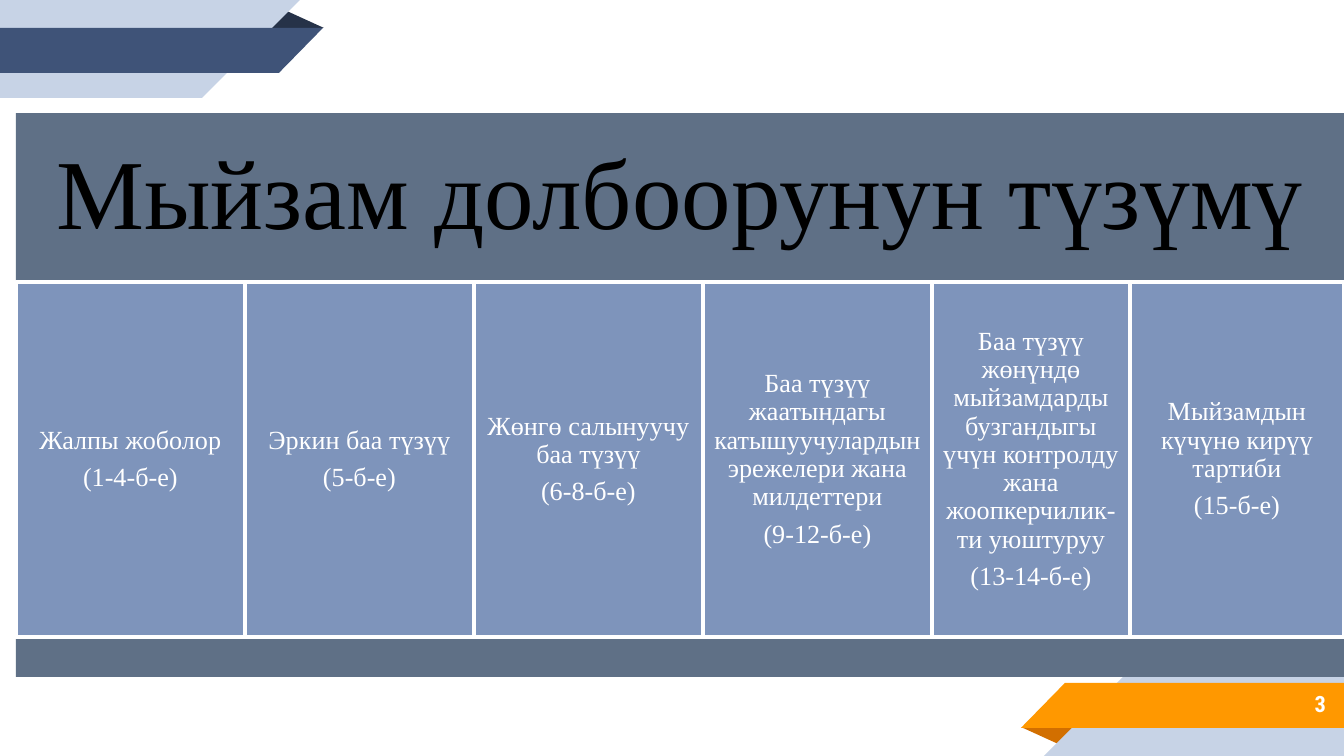
import pptx
import pptx.util
import pptx.dml.color
import pptx.enum.shapes
import pptx.enum.text

PX = 914400 / 134.4
SHAPE = pptx.enum.shapes.MSO_SHAPE
ALIGN = pptx.enum.text.PP_ALIGN
PALE, NAVY, ORANGE = "C7D3E6", "3F5378", "FF9800"
SLATE, BLUE, WHITE = "5F7086", "7E94BB", "FFFFFF"


def emu(*lengths):
    return [round(length * PX) for length in lengths]


def color(hex_string):
    return pptx.dml.color.RGBColor.from_string(hex_string)


deck = pptx.Presentation()
deck.slide_width, deck.slide_height = emu(1344, 756)
slide = deck.slides.add_slide(deck.slide_layouts[5])

# Corner ribbons and the bars of the chart: preset, box in px, fill, flip, rotation
ribbons = [
    (SHAPE.ISOSCELES_TRIANGLE, (266, 10, 58, 18), "263248", None, 0),
    (SHAPE.RECTANGLE, (0, 0, 202, 98), PALE, None, 0),
    (SHAPE.RIGHT_TRIANGLE, (202, 0, 98, 98), PALE, "flipV", 0),
    (SHAPE.RECTANGLE, (0, 28, 279, 45), NAVY, None, 0),
    (SHAPE.RIGHT_TRIANGLE, (279, 28, 44, 45), NAVY, "flipV", 0),
    (SHAPE.ISOSCELES_TRIANGLE, (1021, 727, 58, 18), "D26F00", None, 180),
    (SHAPE.RECTANGLE, (1142, 658, 202, 98), PALE, None, 0),
    (SHAPE.RIGHT_TRIANGLE, (1044, 658, 98, 98), PALE, "flipH", 0),
    (SHAPE.RECTANGLE, (1065, 683, 279, 45), ORANGE, None, 0),
    (SHAPE.RIGHT_TRIANGLE, (1021, 683, 44, 45), ORANGE, "flipH", 0),
    (SHAPE.RECTANGLE, (16, 637, 1328, 40), SLATE, None, 0),
]
for preset, box, fill, flip, rotation in ribbons:
    ribbon = slide.shapes.add_shape(preset, *emu(*box))
    ribbon.shadow.inherit = False
    ribbon.fill.solid()
    ribbon.fill.fore_color.rgb = color(fill)
    ribbon.line.fill.background()
    ribbon.rotation = rotation
    if preset == SHAPE.ISOSCELES_TRIANGLE:
        ribbon.adjustments[0] = 0.32
    if flip:
        ribbon._element.spPr.xfrm.set(flip, "1")

heading = slide.shapes.title
heading.left, heading.top, heading.width, heading.height = emu(16, 113, 1328, 169)
heading.fill.solid()
heading.fill.fore_color.rgb = color(SLATE)
heading.text_frame.text = "Мыйзам долбоорунун түзүмү"

page_number = slide.shapes.add_textbox(*emu(1120, 682, 219, 47))
page_number.text_frame.text = "3"

# Left edge of each chapter in px, its subject and its articles
chapters = [
    (16, "Жалпы жоболор", "(1-4-б-е)"),
    (245, "Эркин баа түзүү", "(5-б-е)"),
    (474, "Жөнгө салынуучу баа түзүү", "(6-8-б-е)"),
    (703, "Баа түзүү жаатындагы катышуучулардын эрежелери жана милдеттери",
     "(9-12-б-е)"),
    (932, "Баа түзүү жөнүндө мыйзамдарды бузгандыгы үчүн контролду жана "
     "жоопкерчилик-ти уюштуруу", "(13-14-б-е)"),
    (1130, "Мыйзамдын күчүнө кирүү тартиби", "(15-б-е)"),
]
right_edges = [chapter[0] for chapter in chapters[1:]] + [1344]

# Text holder, inset in px, size, font, colour, alignment
styled = [
    (heading, 30, 53, "Times New Roman", "000000", ALIGN.CENTER),
    (page_number, 13, 12, "Roboto Condensed", WHITE, ALIGN.RIGHT),
]
for (left, subject, articles), right in zip(chapters, right_edges):
    chapter_box = slide.shapes.add_shape(
        SHAPE.RECTANGLE, *emu(left, 282, right - left, 355))
    chapter_box.shadow.inherit = False
    chapter_box.fill.solid()
    chapter_box.fill.fore_color.rgb = color(BLUE)
    chapter_box.line.color.rgb = color(WHITE)
    chapter_box.line.width = pptx.util.Pt(2)
    chapter_box.text_frame.text = f"{subject}\n{articles}"
    styled.append((chapter_box, 8, 14, "Times New Roman", WHITE, ALIGN.CENTER))

for holder, inset, size, font, ink, alignment in styled:
    frame = holder.text_frame
    frame.word_wrap = True
    frame.auto_size = pptx.enum.text.MSO_AUTO_SIZE.NONE
    frame.vertical_anchor = pptx.enum.text.MSO_ANCHOR.MIDDLE
    (frame.margin_left, frame.margin_top,
     frame.margin_right, frame.margin_bottom) = emu(*[inset] * 4)
    for paragraph in frame.paragraphs:
        paragraph.alignment = alignment
        paragraph.line_spacing = 0.9
        paragraph.space_after = pptx.util.Pt(round(size * 0.35))
        for run in paragraph.runs:
            run.font.size = pptx.util.Pt(size)
            run.font.name = font
            run.font.bold = holder is page_number
            run.font.color.rgb = color(ink)

deck.save("out.pptx")
